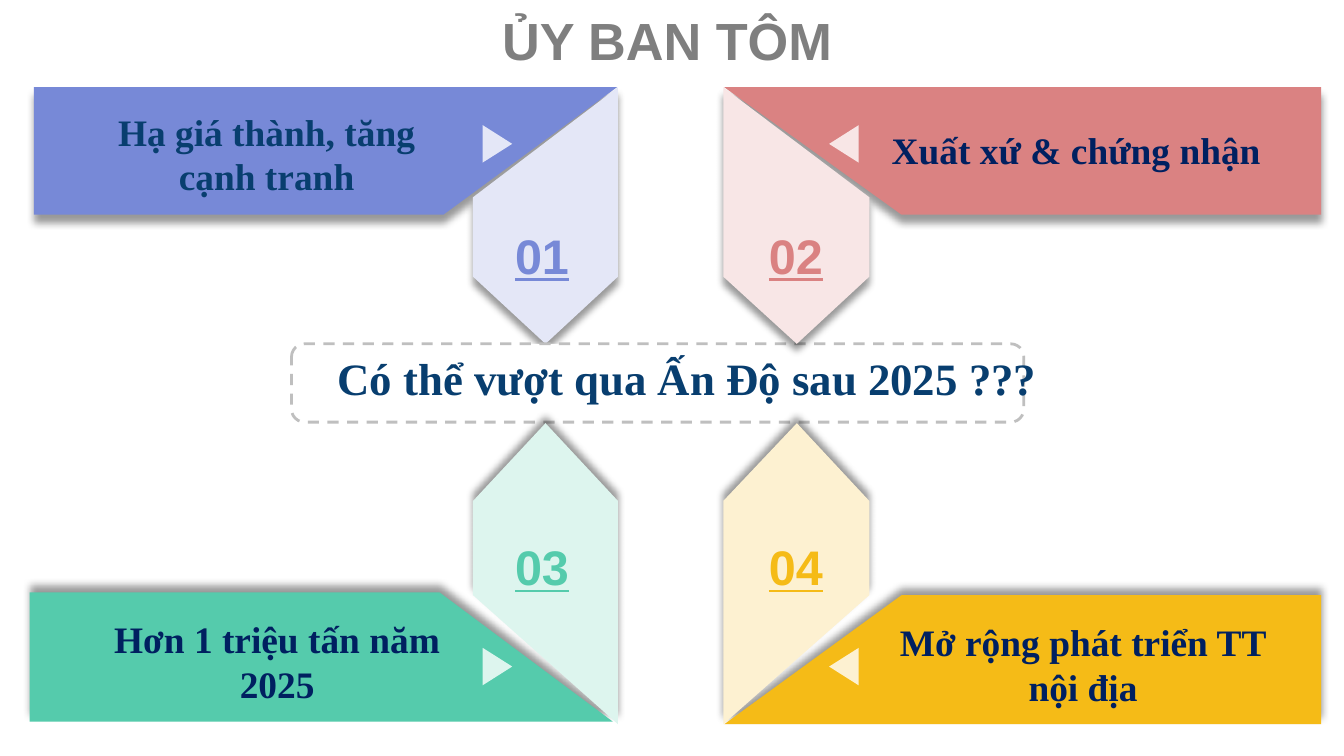
from dataclasses import dataclass

from lxml import etree
from pptx import Presentation
from pptx import util as u
from pptx.dml.color import RGBColor
from pptx.enum import dml, shapes, text
from pptx.oxml.ns import qn


@dataclass(frozen=True)
class Theme:
    sans: str = "Arial"
    serif: str = "Times New Roman"
    title: str = "7F7F7F"
    navy: str = "002060"
    blue: str = "083E6F"
    white: str = "FFFFFF"
    outline: str = "BFBFBF"
    title_size: int = 28
    number_size: int = 26
    question_size: int = 24
    label_size: int = 20


THEME = Theme()


class Board:
    """Draws on one slide; every length is in centimetres."""

    def __init__(self, slide, theme):
        self.slide = slide
        self.theme = theme

    def paint(self, shape, fill):
        shape.shadow.inherit = False
        shape.fill.solid()
        shape.fill.fore_color.rgb = RGBColor.from_string(fill)
        shape.line.fill.background()

    def cast_shadow(self, shape, degrees):
        effects = shape._element.spPr.find(qn("a:effectLst"))
        outer = etree.SubElement(
            effects, qn("a:outerShdw"), blurRad=str(u.Pt(4)), dist=str(u.Pt(4)),
            dir=str(degrees * 60000), algn="t", rotWithShape="0")
        black = etree.SubElement(outer, qn("a:srgbClr"), val="000000")
        etree.SubElement(black, qn("a:alpha"), val="40000")

    def polygon(self, points, fill, shadow_degrees):
        start, *rest = [(u.Cm(x), u.Cm(y)) for x, y in points]
        builder = self.slide.shapes.build_freeform(*start)
        builder.add_line_segments(rest, close=True)
        outline = builder.convert_to_shape()
        self.paint(outline, fill)
        self.cast_shadow(outline, shadow_degrees)

    def pointer(self, center_x, center_y, rotation, fill):
        width, height = 0.71, 0.56
        arrow = self.slide.shapes.add_shape(
            shapes.MSO_SHAPE.ISOSCELES_TRIANGLE, u.Cm(center_x - width / 2),
            u.Cm(center_y - height / 2), u.Cm(width), u.Cm(height))
        arrow.rotation = rotation
        self.paint(arrow, fill)

    def dashed_box(self, left, top, width, height):
        frame = self.slide.shapes.add_shape(
            shapes.MSO_SHAPE.ROUNDED_RECTANGLE,
            u.Cm(left), u.Cm(top), u.Cm(width), u.Cm(height))
        self.paint(frame, self.theme.white)
        frame.line.color.rgb = RGBColor.from_string(self.theme.outline)
        frame.line.width = u.Pt(1.5)
        frame.line.dash_style = dml.MSO_LINE.DASH

    def label(self, words, box, *, size, color, font, wrap=True, underline=None,
              align=text.PP_ALIGN.CENTER, anchor=text.MSO_ANCHOR.TOP,
              line_spacing=None, space_after=None):
        frame = self.slide.shapes.add_textbox(*map(u.Cm, box)).text_frame
        frame.word_wrap = wrap
        frame.auto_size = text.MSO_AUTO_SIZE.SHAPE_TO_FIT_TEXT
        frame.vertical_anchor = anchor
        paragraph = frame.paragraphs[0]
        paragraph.alignment = align
        paragraph.line_spacing = line_spacing
        paragraph.space_after = space_after
        run = paragraph.add_run()
        run.text = words
        run.font.name = font
        run.font.size = u.Pt(size)
        run.font.bold = True
        run.font.underline = underline
        run.font.color.rgb = RGBColor.from_string(color)


@dataclass(frozen=True)
class Side:
    """Horizontal places shared by the upper and lower arm of one side."""
    inner: float
    tip: float
    outer: float
    pointer: float
    rotation: int
    number: float


@dataclass(frozen=True)
class Level:
    """Vertical places shared by the left and right arm of one row."""
    edge: float
    fold: float
    shoulder: float
    tip: float
    pointer: float
    number: float
    shadow: int


@dataclass(frozen=True)
class Arm:
    number: str
    side: Side
    level: Level
    color: str
    tint: str
    banner_x: tuple  # far end, start of the slope, point
    banner_y: tuple  # slope side, straight side


LEFT = Side(11.68, 10.31, 8.94, 9.4, 90, 9.47)
RIGHT = Side(13.67, 15.06, 16.43, 15.95, 270, 14.27)
UPPER = Level(1.65, 3.73, 5.23, 6.5, 2.72, 4.14, 90)
LOWER = Level(13.69, 11.25, 9.47, 8.0, 12.6, 10.03, 270)

ARMS = [
    Arm("01", LEFT, UPPER, "7789D7", "E4E7F7", (0.64, 8.38, 11.66), (4.06, 1.65)),
    Arm("02", RIGHT, UPPER, "DA8282", "F8E6E6", (24.97, 17.04, 13.69), (4.06, 1.65)),
    Arm("03", LEFT, LOWER, "55CBAC", "DDF5EE", (0.56, 8.31, 11.58), (11.2, 13.64)),
    Arm("04", RIGHT, LOWER, "F5BB17", "FDF1D1", (24.97, 17.04, 13.69), (11.25, 13.69)),
]


def draw_arm(board, arm):
    side, level = arm.side, arm.level
    far, slope, point = arm.banner_x
    near_y, edge_y = arm.banner_y
    board.polygon([(far, near_y), (slope, near_y), (point, edge_y), (far, edge_y)],
                  arm.color, level.shadow)
    board.polygon([(side.inner, level.edge), (side.outer, level.fold),
                   (side.outer, level.shoulder), (side.tip, level.tip),
                   (side.inner, level.shoulder)], arm.tint, level.shadow)
    board.pointer(side.pointer, level.pointer, side.rotation, arm.tint)


def main():
    deck = Presentation()
    deck.slide_width, deck.slide_height = u.Cm(25.4), u.Cm(14.29)
    board = Board(deck.slides.add_slide(deck.slide_layouts[6]), THEME)

    board.label("ỦY BAN TÔM", (9.19, 0.03, 6.83, 1.45), size=THEME.title_size,
                color=THEME.title, font=THEME.sans, wrap=False,
                anchor=text.MSO_ANCHOR.MIDDLE)

    first, *others = ARMS
    draw_arm(board, first)
    board.dashed_box(5.51, 6.5, 13.84, 1.48)
    for arm in others:
        draw_arm(board, arm)

    board.label("Có thể vượt qua Ấn Độ sau 2025 ???", (6.07, 6.5, 13.82, 1.27),
                size=THEME.question_size, color=THEME.blue, font=THEME.serif)

    banner_type = {"size": THEME.label_size, "font": THEME.serif}
    board.label("Hạ giá thành, tăng cạnh tranh", (1.27, 1.93, 7.54, 1.96),
                color=THEME.blue, **banner_type)
    board.label("Hơn 1 triệu tấn năm 2025", (1.47, 11.53, 7.54, 1.96),
                color=THEME.navy, **banner_type)
    board.label("Xuất xứ & chứng nhận", (16.36, 2.34, 7.72, 1.07),
                color=THEME.navy, align=text.PP_ALIGN.RIGHT,
                line_spacing=0.95, space_after=u.Pt(8), **banner_type)
    board.label("Mở rộng phát triển TT nội địa", (16.61, 11.58, 7.72, 1.96),
                color=THEME.navy, **banner_type)

    for arm in ARMS:
        board.label(arm.number, (arm.side.number, arm.level.number, 1.55, 1.37),
                    size=THEME.number_size, color=arm.color, font=THEME.sans,
                    wrap=False, underline=True)

    deck.save("out.pptx")


if __name__ == "__main__":
    main()
